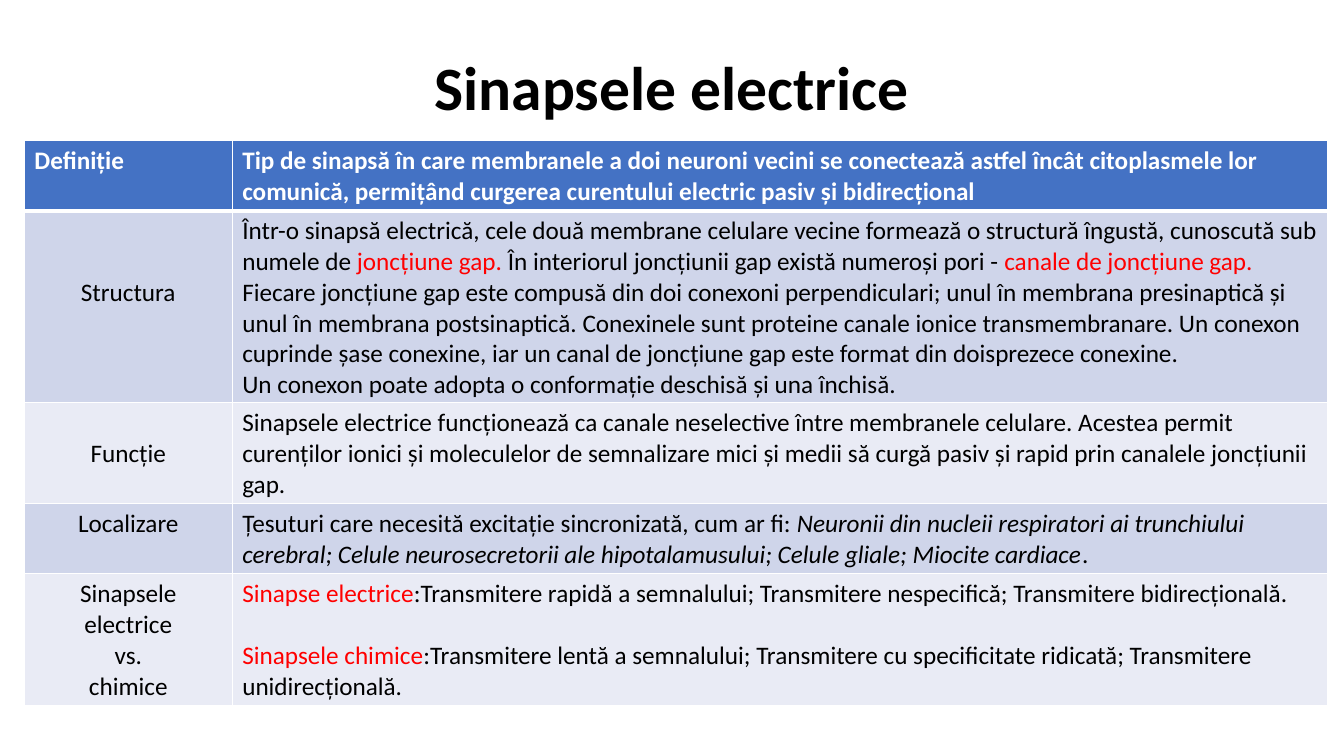
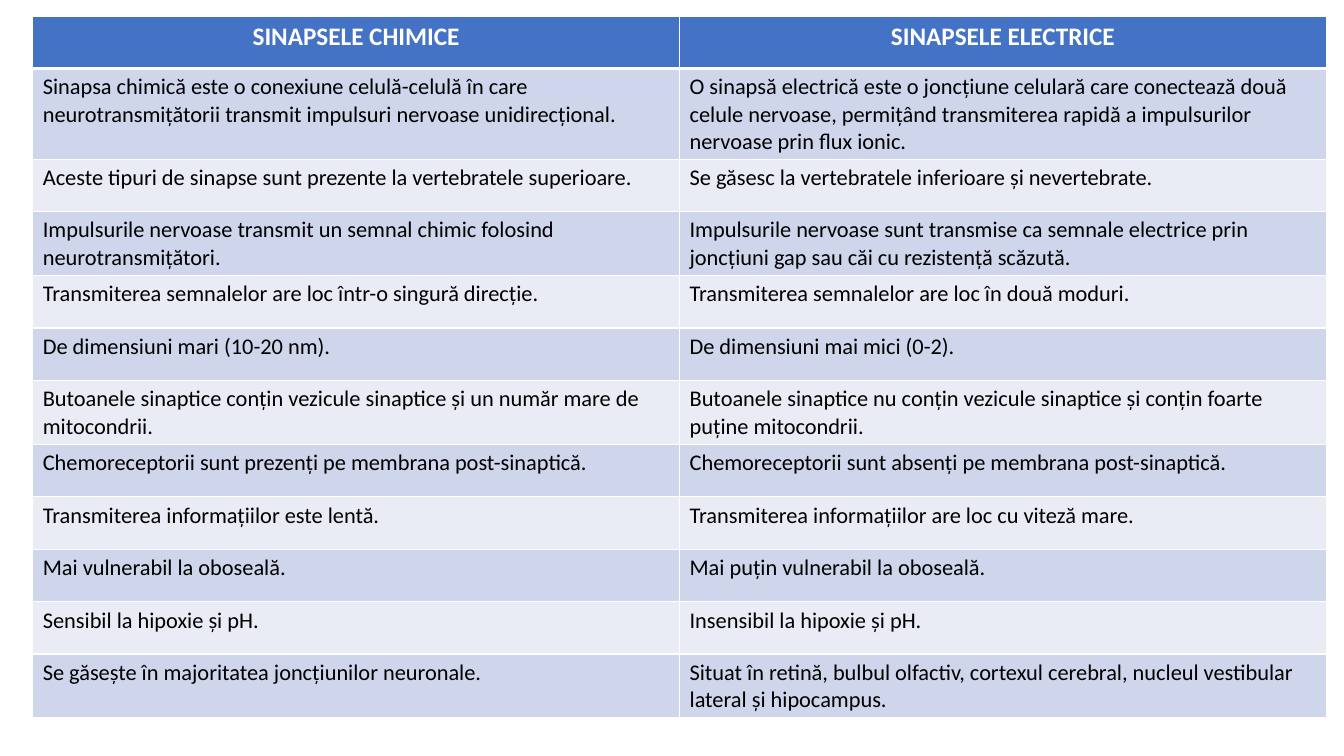
from dataclasses import dataclass

from lxml import etree
from pptx import Presentation
from pptx.dml.color import RGBColor
from pptx.enum.text import MSO_ANCHOR, PP_ALIGN
from pptx.oxml.ns import qn
from pptx.util import Inches, Pt

LEFT, MID = PP_ALIGN.LEFT, PP_ALIGN.CENTER
MIDDLE = MSO_ANCHOR.MIDDLE


@dataclass(frozen=True)
class Theme:
    font: str = "Calibri"
    ink: str = "000000"
    paper: str = "FFFFFF"
    head: str = "4472C4"
    bands: tuple = ("CFD5EA", "E9EBF5")
    mark: str = "FF0000"
    title: int = 44
    body: int = 18
    small: int = 16
    lead: float = 1.22  # line height as a multiple of the type size
    thin: int = 1
    thick: int = 3


THEME = Theme()
RED = {"color": THEME.mark}
SLANT = {"italic": True}


def grid(units):
    """Length of a number of grid units: 160 columns by 90 rows fill the slide."""
    return Inches(units / 12)


def write(frame, text, size=THEME.body, color=THEME.ink, bold=False,
          align=LEFT, spacing=None, gap=0):
    """Fill a frame with a string or a list of paragraphs.

    A paragraph is a string or a list of runs; a run is a string
    or a pair of a string and its own format.
    """
    paras = [text] if isinstance(text, str) else text
    for n, runs in enumerate(paras):
        para = frame.paragraphs[0] if n == 0 else frame.add_paragraph()
        para.alignment = align
        if spacing:
            para.line_spacing = spacing
        if n and gap:
            para.space_before = Pt(gap)
        for part in [runs] if isinstance(runs, str) else runs:
            words, own = (part, {}) if isinstance(part, str) else part
            run = para.add_run()
            run.text = words
            font = run.font
            font.name, font.size, font.bold = THEME.font, Pt(size), bold
            font.italic = own.get("italic", False)
            font.color.rgb = RGBColor.from_string(own.get("color", color))


def edge(cell, top, bottom):
    """Draw the four borders of a cell; top and bottom are widths in points."""
    props = cell._tc.get_or_add_tcPr()
    widths = {"a:lnL": THEME.thin, "a:lnR": THEME.thin, "a:lnT": top, "a:lnB": bottom}
    for tag, width in widths.items():
        line = etree.SubElement(props, qn(tag), w=str(Pt(width)))
        fill = etree.SubElement(line, qn("a:solidFill"))
        etree.SubElement(fill, qn("a:srgbClr"), val=THEME.paper)


class Deck:
    def __init__(self):
        self.file = Presentation()
        self.file.slide_width, self.file.slide_height = grid(160), grid(90)
        self.slide = None

    def page(self):
        self.slide = self.file.slides.add_slide(self.file.slide_layouts[6])

    def title(self, text):
        box = self.slide.shapes.add_textbox(grid(11), grid(4.8), grid(138), grid(11.9))
        frame = box.text_frame
        frame.word_wrap = True
        frame.vertical_anchor = MIDDLE
        write(frame, text, size=THEME.title, bold=True, align=MID, spacing=0.9)

    def table(self, rows, left, top, height, cols, row, size, head=LEFT,
              first=LEFT, drops=None, gaps=None):
        """Banded table; drops lowers first-column labels by lines, gaps parts paragraphs."""
        drops, gaps = drops or {}, gaps or {}
        shape = self.slide.shapes.add_table(
            len(rows), len(cols), grid(left), grid(top), grid(sum(cols)), grid(height))
        table = shape.table
        table.horz_banding = False
        for col, width in zip(table.columns, cols):
            col.width = grid(width)
        for r, texts in enumerate(rows):
            table.rows[r].height = grid(row)
            for c, text in enumerate(texts):
                cell = table.cell(r, c)
                edge(cell, THEME.thick if r == 1 else THEME.thin,
                     THEME.thin if r else THEME.thick)
                cell.fill.solid()
                tint = THEME.bands[(r - 1) % 2] if r else THEME.head
                cell.fill.fore_color.rgb = RGBColor.from_string(tint)
                if r == 0:
                    write(cell.text_frame, text, color=THEME.paper, bold=True, align=head)
                    continue
                if c == 0 and r in drops:
                    cell.margin_top += Pt(drops[r] * size * THEME.lead)
                write(cell.text_frame, text, size=size, align=LEFT if c else first,
                      gap=gaps.get(r, 0) * size * THEME.lead if c else 0)
        shape.height = grid(height)

    def save(self):
        self.file.save("out.pptx")


TRAITS = [
    ("Definiție",
     "Tip de sinapsă în care membranele a doi neuroni vecini se conectează astfel încât "
     "citoplasmele lor comunică, permițând curgerea curentului electric pasiv și bidirecțional"),
    ("Structura", [
        ["Într-o sinapsă electrică, cele două membrane celulare vecine formează o structură "
         "îngustă, cunoscută sub numele de ",
         ("joncțiune gap. ", RED),
         "În interiorul joncțiunii gap există numeroși pori - ",
         ("canale de joncțiune gap.", RED)],
        "Fiecare joncțiune gap este compusă din doi conexoni perpendiculari; unul în membrana "
        "presinaptică și unul în membrana postsinaptică. Conexinele sunt proteine canale ionice "
        "transmembranare. Un conexon cuprinde șase conexine, iar un canal de joncțiune gap este "
        "format din doisprezece conexine.",
        "Un conexon poate adopta o conformație deschisă și una închisă."]),
    ("Funcție",
     "Sinapsele electrice funcționează ca canale neselective între membranele celulare. Acestea "
     "permit curenților ionici și moleculelor de semnalizare mici și medii să curgă pasiv și "
     "rapid prin canalele joncțiunii gap."),
    ("Localizare", [
        ["Țesuturi care necesită excitație sincronizată, cum ar fi: ",
         ("Neuronii din nucleii respiratori ai trunchiului cerebral; Celule neurosecretorii ale "
          "hipotalamusului; Celule gliale; Miocite cardiace", SLANT),
         "."]]),
    (["Sinapsele electrice", "vs.", "chimice"], [
        [("Sinapse electrice", RED),
         ":Transmitere rapidă a semnalului; Transmitere nespecifică; Transmitere bidirecțională."],
        [("Sinapsele chimice", RED),
         ":Transmitere lentă a semnalului; Transmitere cu specificitate ridicată; Transmitere "
         "unidirecțională."]]),
]

PAIRS = [
    ("SINAPSELE CHIMICE", "SINAPSELE ELECTRICE"),
    ("Sinapsa chimică este o conexiune celulă-celulă în care neurotransmițătorii transmit "
     "impulsuri nervoase unidirecțional.",
     "O sinapsă electrică este o joncțiune celulară care conectează două celule nervoase, "
     "permițând transmiterea rapidă a impulsurilor nervoase prin flux ionic."),
    ("Aceste tipuri de sinapse sunt prezente la vertebratele superioare.",
     "Se găsesc la vertebratele inferioare și nevertebrate."),
    ("Impulsurile nervoase transmit un semnal chimic folosind neurotransmițători.",
     "Impulsurile nervoase sunt transmise ca semnale electrice prin joncțiuni gap sau căi cu "
     "rezistență scăzută."),
    ("Transmiterea semnalelor are loc într-o singură direcție.",
     "Transmiterea semnalelor are loc în două moduri."),
    ("De dimensiuni mari (10-20 nm).", "De dimensiuni mai mici (0-2)."),
    ("Butoanele sinaptice conțin vezicule sinaptice și un număr mare de mitocondrii.",
     "Butoanele sinaptice nu conțin vezicule sinaptice și conțin foarte puține mitocondrii."),
    ("Chemoreceptorii sunt prezenți pe membrana post-sinaptică.",
     "Chemoreceptorii sunt absenți pe membrana post-sinaptică."),
    ("Transmiterea informațiilor este lentă.",
     "Transmiterea informațiilor are loc cu viteză mare."),
    ("Mai vulnerabil la oboseală.", "Mai puțin vulnerabil la oboseală."),
    ("Sensibil la hipoxie și pH.", "Insensibil la hipoxie și pH."),
    ("Se găsește în majoritatea joncțiunilor neuronale.",
     "Situat în retină, bulbul olfactiv, cortexul cerebral, nucleul vestibular lateral și "
     "hipocampus."),
]


def main():
    deck = Deck()
    deck.page()
    deck.title("Sinapsele electrice")
    deck.table(TRAITS, left=2.9, top=16.7, height=67.2, cols=(24.75, 130.4), row=4.9,
               size=THEME.body, first=MID, drops={1: 2, 2: 1}, gaps={4: 1})
    deck.page()
    deck.table(PAIRS, left=3.9, top=1.9, height=84, cols=(77, 77), row=6.25,
               size=THEME.small, head=MID)
    deck.save()


if __name__ == "__main__":
    main()
